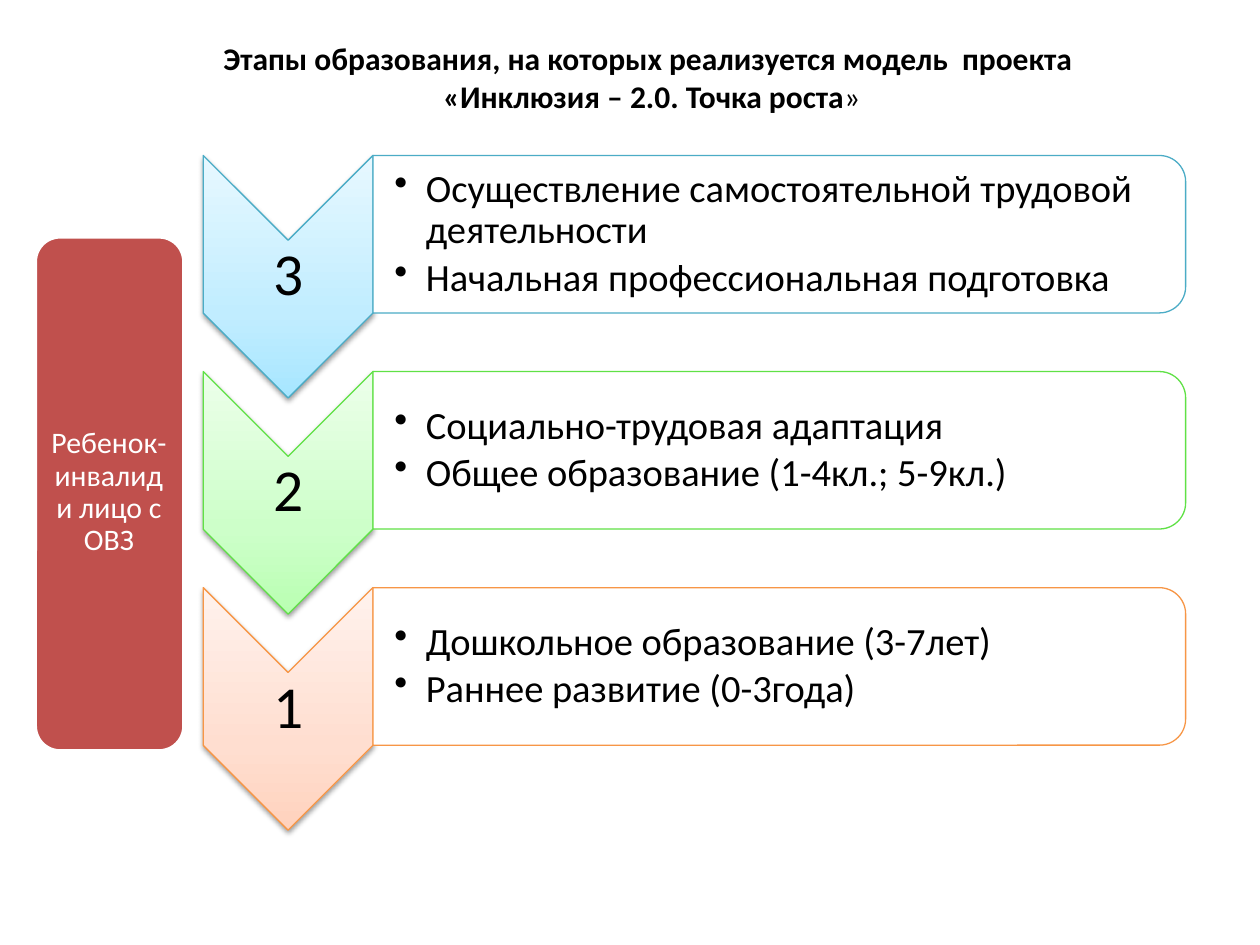
from dataclasses import dataclass

import pptx
import pptx.dml.color
import pptx.enum.shapes
import pptx.enum.text
import pptx.oxml
import pptx.oxml.ns
import pptx.util

RGBColor = pptx.dml.color.RGBColor
Shapes = pptx.enum.shapes.MSO_SHAPE
Align = pptx.enum.text.PP_ALIGN
Anchor = pptx.enum.text.MSO_ANCHOR

WHITE = RGBColor(0xFF, 0xFF, 0xFF)
BLACK = RGBColor(0x00, 0x00, 0x00)
RED = RGBColor(0xC0, 0x50, 0x4D)
BLUE = RGBColor(0x4B, 0xAC, 0xC6)
GREEN = RGBColor(0x60, 0xE1, 0x46)
ORANGE = RGBColor(0xF7, 0x96, 0x46)
BLUE_TINTS = (RGBColor(0xA7, 0xE6, 0xFF), RGBColor(0xC1, 0xED, 0xFF), RGBColor(0xE7, 0xF8, 0xFF))
GREEN_TINTS = (RGBColor(0xB9, 0xFF, 0xB2), RGBColor(0xCD, 0xFF, 0xC9), RGBColor(0xEC, 0xFF, 0xEA))
ORANGE_TINTS = (RGBColor(0xFF, 0xD2, 0xBD), RGBColor(0xFF, 0xDE, 0xD0), RGBColor(0xFF, 0xF2, 0xED))
TINT_STOPS = (0, 35, 100)

SLIDE_WIDTH = pptx.util.Inches(10)
SLIDE_HEIGHT = pptx.util.Inches(7.5)
COLUMN = SLIDE_WIDTH / 100
ROW = SLIDE_HEIGHT / 75
FIRST_STAGE_ROW = 12.34
STAGE_PITCH = 17.15
FONT = "Calibri"


@dataclass(frozen=True)
class Area:
    """A visible rectangle in grid columns and rows."""
    left: float
    top: float
    width: float
    height: float

    def emu(self) -> tuple[int, ...]:
        return (round(self.left * COLUMN), round(self.top * ROW),
                round(self.width * COLUMN), round(self.height * ROW))

    def unturned(self) -> "Area":
        """The frame that covers this area once it is turned by 90 degrees."""
        shift = (self.width - self.height) / 2
        return Area(self.left + shift, self.top - shift, self.height, self.width)


@dataclass(frozen=True)
class Span:
    text: str
    bold: bool = False


@dataclass(frozen=True)
class Stage:
    number: str
    items: tuple[str, ...]
    line: RGBColor
    tints: tuple[RGBColor, ...]


STAGES = (
    Stage("3", ("Осуществление самостоятельной трудовой деятельности",
                "Начальная профессиональная подготовка"), BLUE, BLUE_TINTS),
    Stage("2", ("Социально-трудовая адаптация",
                "Общее образование (1-4кл.; 5-9кл.)"), GREEN, GREEN_TINTS),
    Stage("1", ("Дошкольное образование (3-7лет)",
                "Раннее развитие (0-3года)"), ORANGE, ORANGE_TINTS),
)
TITLE = (
    (Span("Этапы образования, на которых реализуется модель  проекта", bold=True),),
    (Span(" «Инклюзия – 2.0. Точка роста", bold=True), Span("»")),
)


def drawing_element(xml: str):
    namespace = pptx.oxml.ns.nsdecls("a")
    return pptx.oxml.parse_xml(xml.replace(">", f" {namespace}>", 1))


def add_text(slide, area: Area, paragraphs, *, size: float, color: RGBColor = BLACK,
             align=Align.CENTER, anchor=Anchor.MIDDLE, inset: float = 0.02,
             left_inset: float | None = None, line_spacing: float = 0.9,
             space_after: float = 0, bulleted: bool = False):
    """Add a text box; each paragraph is a sequence of spans."""
    frame = slide.shapes.add_textbox(*area.emu()).text_frame
    frame.word_wrap = True
    frame.vertical_anchor = anchor
    frame.margin_top = frame.margin_right = frame.margin_bottom = pptx.util.Inches(inset)
    frame.margin_left = pptx.util.Inches(inset if left_inset is None else left_inset)
    for index, spans in enumerate(paragraphs):
        para = frame.add_paragraph() if index else frame.paragraphs[0]
        para.alignment = align
        para.line_spacing = line_spacing
        para.space_after = pptx.util.Pt(space_after)
        if bulleted:
            properties = para._p.get_or_add_pPr()
            indent = pptx.util.Inches(0.25)
            properties.set("marL", str(indent))
            properties.set("indent", str(-indent))
            properties.append(drawing_element('<a:buChar char="•"></a:buChar>'))
        for span in spans:
            run = para.add_run()
            run.text = span.text
            run.font.name = FONT
            run.font.size = pptx.util.Pt(size)
            run.font.bold = span.bold
            run.font.color.rgb = color


def add_outlined(slide, kind, area: Area, *, line: RGBColor, line_width: float = 0.75,
                 fill: RGBColor = WHITE, turned: bool = False):
    frame = area.unturned() if turned else area
    shape = slide.shapes.add_shape(kind, *frame.emu())
    shape.rotation = 90 if turned else 0
    shape.shadow.inherit = False
    shape.fill.solid()
    shape.fill.fore_color.rgb = fill
    shape.line.color.rgb = line
    shape.line.width = pptx.util.Pt(line_width)
    return shape


def set_gradient(shape, tints: tuple[RGBColor, ...]) -> None:
    stops = "".join(
        f'<a:gs pos="{stop * 1000}"><a:srgbClr val="{tint}"/></a:gs>'
        for stop, tint in zip(TINT_STOPS, tints))
    gradient = drawing_element(
        f'<a:gradFill rotWithShape="0"><a:gsLst>{stops}</a:gsLst>'
        '<a:lin ang="16200000" scaled="0"/></a:gradFill>')
    properties = shape._element.spPr
    properties.replace(properties.find(pptx.oxml.ns.qn("a:solidFill")), gradient)


def set_soft_shadow(shape) -> None:
    blur, distance = pptx.util.Pt(3.1), pptx.util.Pt(1.6)
    effects = shape._element.spPr.find(pptx.oxml.ns.qn("a:effectLst"))
    effects.append(drawing_element(
        f'<a:outerShdw blurRad="{blur}" dist="{distance}" dir="5400000" rotWithShape="0">'
        '<a:srgbClr val="000000"><a:alpha val="38000"/></a:srgbClr></a:outerShdw>'))


def add_stage(slide, stage: Stage, top: float) -> None:
    chevron = add_outlined(slide, Shapes.CHEVRON, Area(16.13, top, 13.47, 19.25),
                           line=stage.line, turned=True)
    set_gradient(chevron, stage.tints)
    set_soft_shadow(chevron)
    add_text(slide, Area(16.13, top + 6.73, 13.47, 5.77), [(Span(stage.number),)],
             size=34, space_after=11.9)
    add_outlined(slide, Shapes.ROUND_2_SAME_RECTANGLE, Area(29.6, top, 64.5, 12.5),
                 line=stage.line, turned=True)
    add_text(slide, Area(29.6, top + 0.6, 63.9, 11.3), [(Span(item),) for item in stage.items],
             size=22, align=Align.LEFT, left_inset=0.17, space_after=3.3, bulleted=True)


def main() -> None:
    deck = pptx.Presentation()
    deck.slide_width, deck.slide_height = SLIDE_WIDTH, SLIDE_HEIGHT
    page = deck.slides.add_slide(deck.slide_layouts[6])
    for index, stage in enumerate(STAGES):
        add_stage(page, stage, FIRST_STAGE_ROW + index * STAGE_PITCH)
    add_text(page, Area(6.7, 2.6, 89, 9.4), TITLE, size=18, anchor=Anchor.TOP,
             inset=0.05, left_inset=0.1, line_spacing=1)
    add_outlined(page, Shapes.ROUNDED_RECTANGLE, Area(2.8, 18.8, 11.8, 40.8),
                 line=WHITE, line_width=2, fill=RED)
    add_text(page, Area(3.3, 19.3, 10.7, 39.6), [(Span("Ребенок-инвалид и лицо с ОВЗ"),)],
             size=17, color=WHITE, inset=0.07, space_after=5.95)
    deck.save("out.pptx")


if __name__ == "__main__":
    main()
